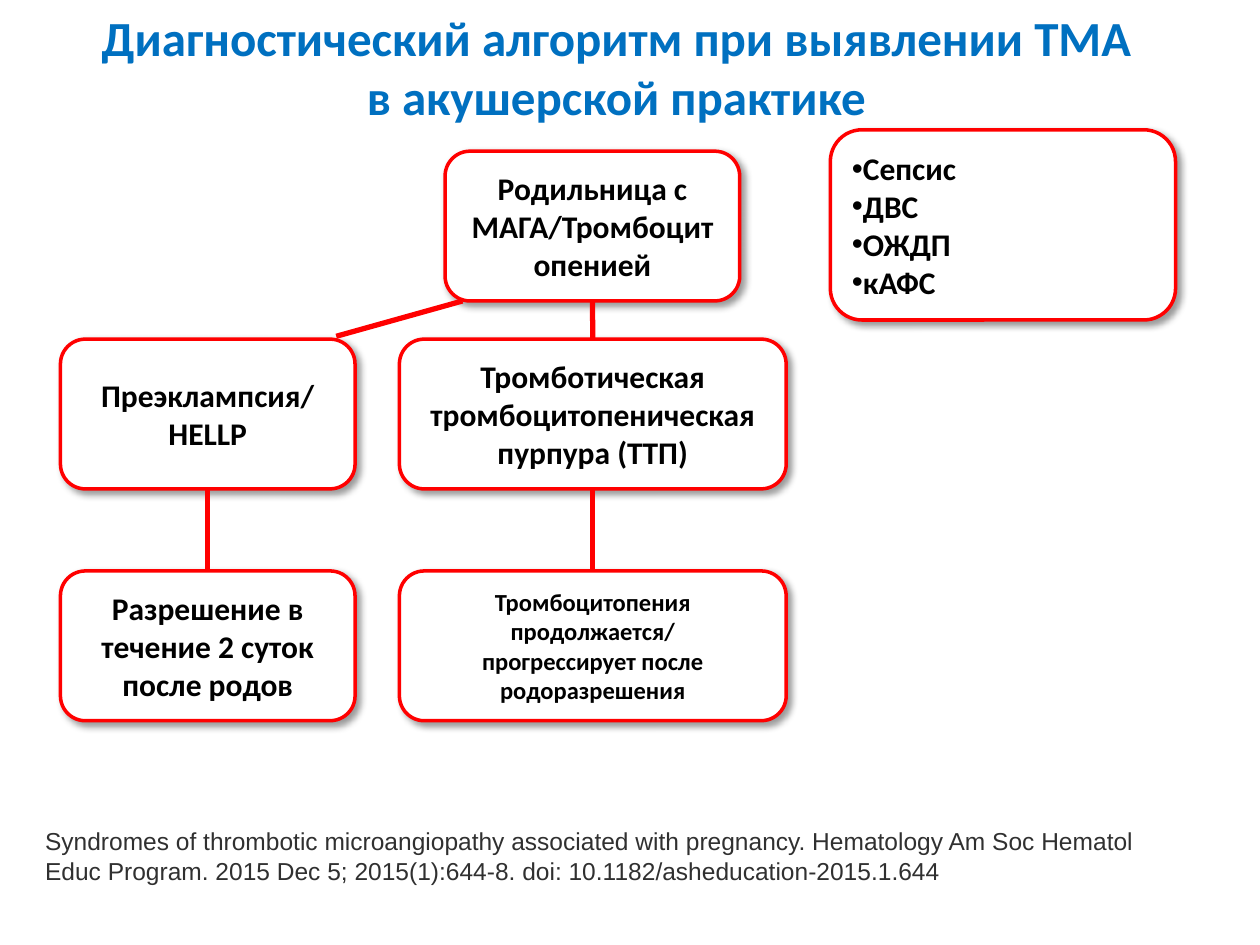
from dataclasses import dataclass

from lxml.etree import SubElement
from pptx import Presentation
from pptx.dml.color import RGBColor as RGB
from pptx.enum.shapes import MSO_CONNECTOR as Line, MSO_SHAPE as Shape
from pptx.enum.text import MSO_ANCHOR as Anchor, MSO_AUTO_SIZE as Fit, PP_ALIGN as Align
from pptx.oxml import parse_xml
from pptx.oxml.ns import nsdecls, qn
from pptx.util import Inches, Pt


@dataclass(frozen=True)
class Theme:
    title: str = "0070C0"
    accent: str = "FF0000"
    paper: str = "FFFFFF"
    ink: str = "000000"
    source: str = "303030"
    head_font: str = "Calibri"
    source_font: str = "Arial"
    title_size: int = 28
    node_size: int = 18
    small_size: int = 14
    border: int = 2
    link: int = 3


@dataclass(frozen=True)
class Box:
    x: int
    y: int
    w: int
    h: int

    def share(self, x, y, w, h):
        return Box(int(self.x + self.w * x / 100), int(self.y + self.h * y / 100),
                   int(self.w * w / 100), int(self.h * h / 100))

    def place(self):
        return self.x, self.y, self.w, self.h


T = Theme()
SHADOW = (f'<a:effectLst {nsdecls("a")}><a:outerShdw blurRad="{Pt(4)}" dist="{Pt(3)}" '
          f'dir="2700000" algn="tl" rotWithShape="0"><a:srgbClr val="{T.ink}">'
          '<a:alpha val="40000"/></a:srgbClr></a:outerShdw></a:effectLst>')


def write(tf, text, *, size, color=T.ink, font=T.head_font, bold=True,
          align=Align.CENTER, anchor=Anchor.MIDDLE, bullet=None):
    tf.word_wrap = True
    tf.vertical_anchor = anchor
    for i, line in enumerate(text.split("\n")):
        p = tf.add_paragraph() if i else tf.paragraphs[0]
        p.alignment = align
        if bullet:
            pPr = p._p.get_or_add_pPr()
            clr = SubElement(pPr, qn("a:buClr"))
            SubElement(clr, qn("a:srgbClr"), val=color)
            SubElement(pPr, qn("a:buFont"), typeface=T.source_font)
            SubElement(pPr, qn("a:buChar"), char=bullet)
        r = p.add_run()
        r.text = line
        r.font.name, r.font.size, r.font.bold = font, Pt(size), bold
        r.font.color.rgb = RGB.from_string(color)


def add_node(s, box, text, size=T.node_size, **fmt):
    sp = s.shapes.add_shape(Shape.ROUNDED_RECTANGLE, *box.place())
    sp.fill.solid()
    sp.fill.fore_color.rgb = RGB.from_string(T.paper)
    sp.line.color.rgb = RGB.from_string(T.accent)
    sp.line.width = Pt(T.border)
    sp._element.spPr.append(parse_xml(SHADOW))
    write(sp.text_frame, text, size=size, **fmt)
    return sp


def add_link(s, start=(0, 0), end=(0, 0)):
    cx = s.shapes.add_connector(Line.STRAIGHT, *start, *end)
    cx.line.color.rgb = RGB.from_string(T.accent)
    cx.line.width = Pt(T.link)
    SubElement(cx._element.spPr, qn("a:effectLst"))
    return cx


def add_title(s, box, text):
    sp = s.shapes.title
    sp.left, sp.top, sp.width, sp.height = box.place()
    write(sp.text_frame, text, size=T.title_size, color=T.title)


def add_flowchart(s, box):
    columns = {"left": (0, 40.6), "right": (46.7, 53.3), "root": (53, 40.6)}
    rows, row_h = (0, 33, 73.7), 26.3

    def node(column, row, text, **fmt):
        x, w = columns[column]
        return add_node(s, box.share(x, rows[row], w, row_h), text, **fmt)

    preeclampsia = node("left", 1, "Преэклампсия/\nHELLP")
    persists = node("right", 2, "Тромбоцитопения продолжается/\n"
                    "прогрессирует после родоразрешения", size=T.small_size)
    ttp = node("right", 1, "Тромботическая тромбоцитопеническая пурпура (ТТП)")
    resolves = node("left", 2, "Разрешение в течение 2 суток после родов")
    root = node("root", 0, "Родильница с МАГА/Тромбоцитопенией")

    for upper, lower in ((root, ttp), (preeclampsia, resolves), (ttp, persists)):
        cx = add_link(s)
        cx.begin_connect(upper, 2)
        cx.end_connect(lower, 0)
    start, end = box.share(55.4, row_h, 0, 0), box.share(38, 32.5, 0, 0)
    add_link(s, (start.x, start.y), (end.x, end.y))


def add_causes(s, box):
    add_node(s, box, "Сепсис\nДВС\nОЖДП\nкАФС", align=Align.LEFT, bullet="•")


def add_source(s, box):
    tf = s.shapes.add_textbox(*box.place()).text_frame
    write(tf, "Syndromes of thrombotic microangiopathy associated with pregnancy. "
          "Hematology Am Soc Hematol\n"
          "Educ Program. 2015 Dec 5; 2015(1):644-8. doi: 10.1182/asheducation-2015.1.644",
          size=T.small_size, color=T.source, font=T.source_font, bold=False,
          align=Align.LEFT, anchor=Anchor.TOP)
    tf.auto_size = Fit.SHAPE_TO_FIT_TEXT


def main():
    prs = Presentation()
    prs.slide_width, prs.slide_height = Inches(10), Inches(7.5)
    page = Box(0, 0, prs.slide_width, prs.slide_height)
    s = prs.slides.add_slide(prs.slide_layouts[5])
    add_title(s, page.share(5.8, -2.67, 86.2, 19.33),
              "Диагностический алгоритм при выявлении ТМА в акушерской практике")
    add_flowchart(s, page.share(4.8, 16, 57.6, 60.27))
    add_causes(s, page.share(65.9, 13.73, 27.4, 20.13))
    add_source(s, page.share(2.6, 86.8, 92.6, 7.6))
    prs.save("out.pptx")


if __name__ == "__main__":
    main()
